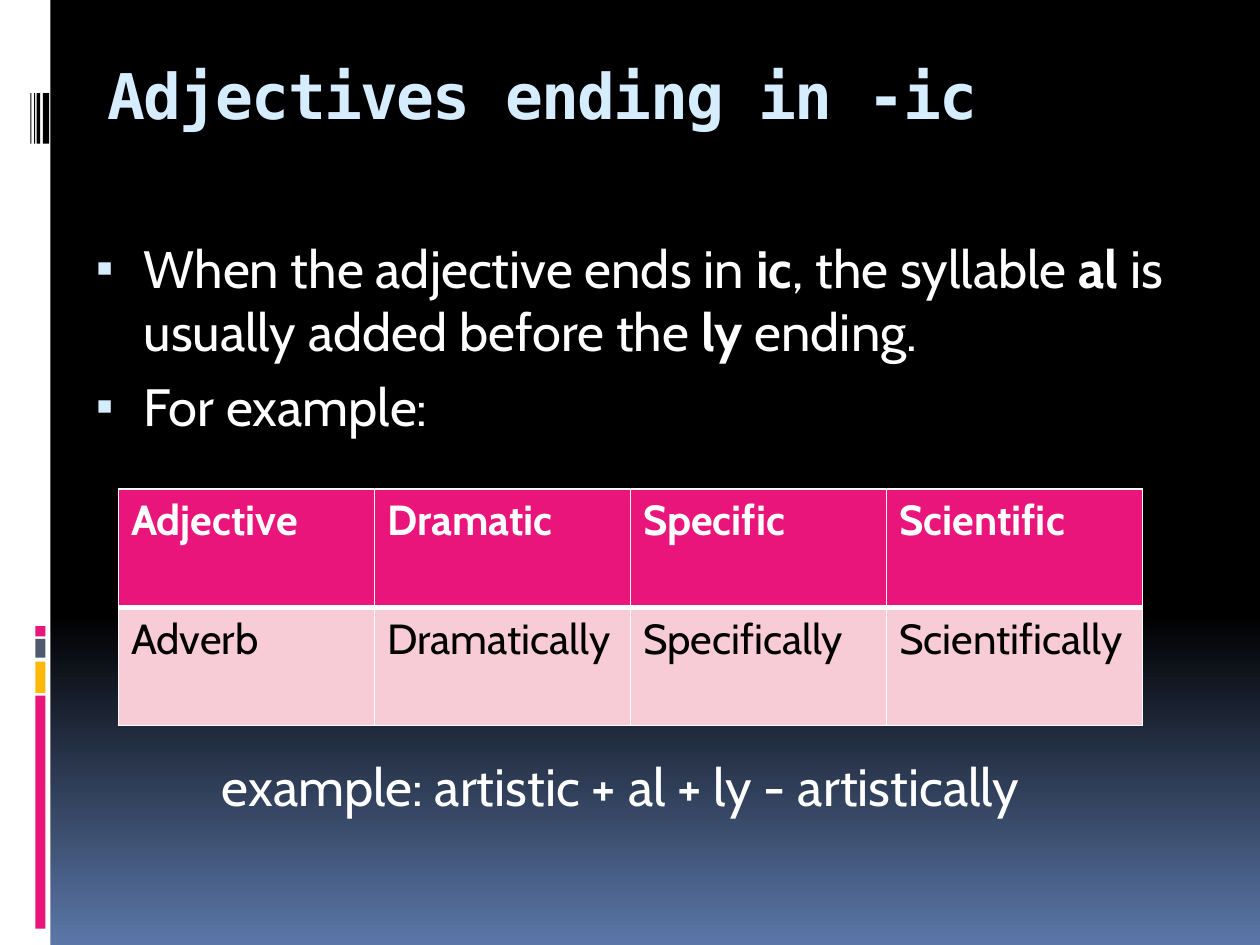
from copy import deepcopy
from dataclasses import dataclass

from lxml import etree
from pptx import Presentation
from pptx.dml.color import RGBColor
from pptx.enum.shapes import MSO_SHAPE
from pptx.enum.text import MSO_ANCHOR, MSO_AUTO_SIZE, PP_ALIGN
from pptx.oxml.ns import qn
from pptx.util import Inches, Pt

RECT = MSO_SHAPE.RECTANGLE
TOP = MSO_ANCHOR.TOP
LEFT = PP_ALIGN.LEFT
FIXED = MSO_AUTO_SIZE.NONE

WHITE = RGBColor(0xFF, 0xFF, 0xFF)
BLACK = RGBColor(0, 0, 0)
PINK = RGBColor(0xEA, 0x15, 0x7A)
BLUSH = RGBColor(0xF7, 0xCC, 0xD7)
GOLD = RGBColor(0xFE, 0xB8, 0x0A)
SLATE = RGBColor(0x4E, 0x5B, 0x6F)
ICE = RGBColor(0xD6, 0xEC, 0xFF)
BLUE = RGBColor(0x5B, 0x77, 0xA8)

# Grid: 100 columns by 75 rows
WIDE, HIGH = Inches(10), Inches(7.5)
COL, ROW = WIDE / 100, HIGH / 75

SANS, MONO = "Cabin", "DejaVu Sans Mono"
HEAD = {"name": MONO, "size": Pt(36), "bold": True}
BODY = {"name": SANS, "size": Pt(30), "bold": False}
CELL = {"name": SANS, "size": Pt(24), "bold": False}
FRAME = {"auto_size": FIXED, "word_wrap": True, "vertical_anchor": TOP}


@dataclass
class Box:
    """A place on the grid, in columns and rows."""
    x: float
    y: float
    w: float
    h: float

    def place(self) -> list:
        return [round(n) for n in (self.x * COL, self.y * ROW,
                                   self.w * COL, self.h * ROW)]


@dataclass
class Bar:
    box: Box
    fill: RGBColor


@dataclass
class Line:
    runs: list
    left: float
    hang: float = 0
    gap: float = 7
    mark: bool = False


def apply(item, values: dict) -> None:
    for key, value in values.items():
        setattr(item, key, value)


def style(font, values: dict, color: RGBColor) -> None:
    apply(font, values)
    font.color.rgb = color


def move(shape, box: Box) -> None:
    apply(shape, dict(zip(("left", "top", "width", "height"), box.place())))


def draw_bar(slide, bar: Bar) -> None:
    shape = slide.shapes.add_shape(RECT, *bar.box.place())
    shape.shadow.inherit = False
    shape.fill.solid()
    shape.fill.fore_color.rgb = bar.fill
    shape.line.fill.background()


def paint(slide, stops: list) -> None:
    fill = slide.background.fill
    fill.gradient()
    fill.gradient_angle = 270
    last = fill.gradient_stops[-1]._gs
    last.addprevious(deepcopy(last))
    for stop, (share, color) in zip(fill.gradient_stops, stops):
        stop.position = share
        stop.color.rgb = color


def set_mark(props, mark: bool) -> None:
    if not mark:
        etree.SubElement(props, qn("a:buNone"))
        return
    tint = etree.SubElement(props, qn("a:buClr"))
    etree.SubElement(tint, qn("a:srgbClr"), val=str(ICE))
    etree.SubElement(props, qn("a:buSzPct"), val="95000")
    etree.SubElement(props, qn("a:buChar"), char="▪")


def write_line(para, line: Line) -> None:
    apply(para, {"alignment": LEFT, "space_before": Pt(line.gap)})
    props = para._p.get_or_add_pPr()
    props.set("marL", str(Inches(line.left)))
    props.set("indent", str(Inches(line.hang)))
    set_mark(props, line.mark)
    # Every second run is a stressed ending
    for spot, text in enumerate(line.runs):
        run = para.add_run()
        run.text = text
        style(run.font, BODY | {"bold": spot % 2 == 1}, WHITE)


def edge(cell, sides: dict) -> None:
    props = cell._tc.get_or_add_tcPr()
    for side, width in sides.items():
        rule = etree.SubElement(props, qn(f"a:ln{side}"), w=str(Pt(width)))
        fill = etree.SubElement(rule, qn("a:solidFill"))
        etree.SubElement(fill, qn("a:srgbClr"), val=str(WHITE))


def draw_table(slide, box: Box, rows: list) -> None:
    table = slide.shapes.add_table(len(rows), len(rows[0]), *box.place()).table
    for r, words in enumerate(rows):
        first = r == 0
        for c, word in enumerate(words):
            cell = table.cell(r, c)
            cell.text = word
            style(cell.text_frame.paragraphs[0].runs[0].font,
                  CELL | {"bold": first}, WHITE if first else BLACK)
            edge(cell, {"L": 1, "R": 1, "T": 1 if first else 3,
                        "B": 3 if first else 1})
            cell.fill.solid()
            cell.fill.fore_color.rgb = PINK if first else BLUSH


BARS = [
    Bar(Box(0, 0, 4, 75), WHITE),
    # Colour strip
    Bar(Box(2.8, 55.2, 0.8, 18.5), PINK),
    Bar(Box(2.8, 52.5, 0.8, 2.5), GOLD),
    Bar(Box(2.8, 50.7, 0.8, 1.5), SLATE),
    Bar(Box(2.8, 49.7, 0.8, 0.8), PINK),
] + [
    # Thin black stripes
    Bar(Box(x, 7.4, w, 4), BLACK)
    for x, w in ((3.4, 0.5), (2.9, 0.3), (2.7, 0.1), (2.4, 0.1))
]

LINES = [
    Line(["When the adjective ends in ", "ic", ", the syllable ", "al",
          " is usually added before the ", "ly", " ending."],
         0.45, -0.38, mark=True),
    Line(["For example:"], 0.45, -0.38, mark=True),
    # The wide gap leaves room for the table
    Line(["example: artistic + al + ly - artistically"], 1.07, gap=181),
]

WORDS = [
    ["Adjective", "Dramatic", "Specific", "Scientific"],
    ["Adverb", "Dramatically", "Specifically", "Scientifically"],
]


def main() -> None:
    deck = Presentation()
    apply(deck, {"slide_width": WIDE, "slide_height": HIGH})
    slide = deck.slides.add_slide(deck.slide_layouts[1])
    title, body = slide.placeholders

    # Backdrop and side band
    paint(slide, [(0, BLACK), (0.65, BLACK), (1, BLUE)])
    for bar in BARS:
        draw_bar(slide, bar)

    # Title
    move(title, Box(7.5, 3.6, 90, 9.5))
    apply(title.text_frame, FRAME | {"margin_top": Inches(0.09)})
    para = title.text_frame.paragraphs[0]
    para.alignment = LEFT
    run = para.add_run()
    run.text = "Adjectives ending in -ic"
    style(run.font, HEAD, ICE)
    run.font._element.set("spc", "-100")

    # Rule and examples
    move(body, Box(5.9, 18.2, 90, 56.8))
    frame = body.text_frame
    apply(frame, FRAME)
    for spot, line in enumerate(LINES):
        write_line(frame.add_paragraph() if spot else frame.paragraphs[0], line)

    draw_table(slide, Box(9.4, 38.8, 81.3, 18.8), WORDS)
    deck.save("out.pptx")


if __name__ == "__main__":
    main()
